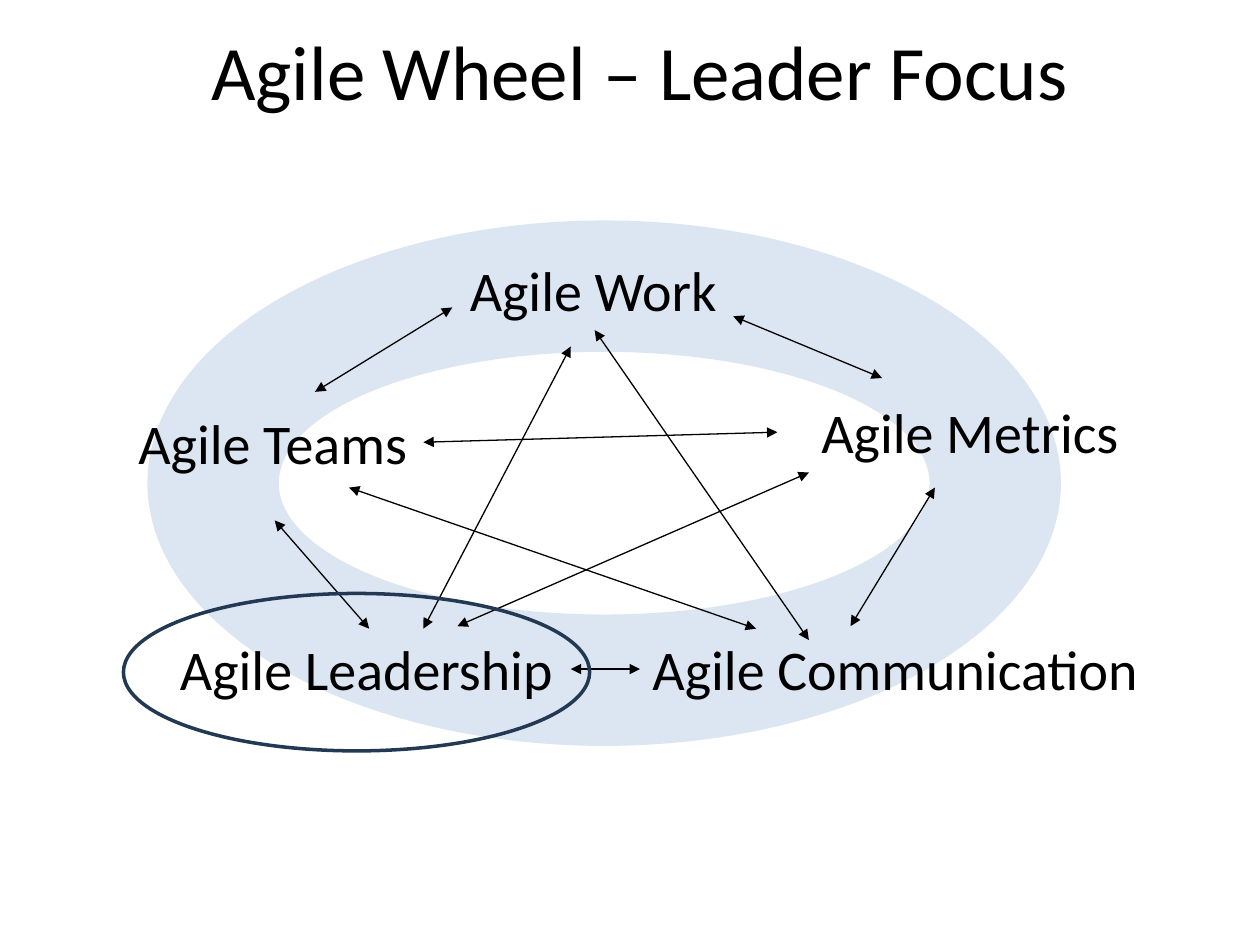
import pptx
import pptx.util
import pptx.dml.color
import pptx.enum.shapes
import pptx.enum.text
import pptx.oxml
from pptx.oxml.ns import qn

Inches, Pt = pptx.util.Inches, pptx.util.Pt
SHAPE = pptx.enum.shapes.MSO_SHAPE
ANCHOR = pptx.enum.text.MSO_ANCHOR
ALIGN = pptx.enum.text.PP_ALIGN
AUTO_SIZE = pptx.enum.text.MSO_AUTO_SIZE

FONT = "Calibri"
BLACK, PALE_BLUE, NAVY = "000000", "DCE6F2", "233953"

TITLE = ("Agile Wheel – Leader Focus", (0.58, 0.14, 9, 1.25))
WHEEL = (1.17, 1.75, 7.25, 4.17)
FOCUS_RING = (0.98, 4.71, 3.7, 1.25)

LABEL_HEIGHT = 0.64
LABELS = [  # text, left, top, width
    ("Agile Work", 3.63, 1.98, 2.18),
    ("Agile Metrics", 6.42, 3.11, 2.58),
    ("Agile Communication", 5.08, 4.99, 4.1),
    ("Agile Teams", 1, 3.19, 2.36),
    ("Agile Leadership", 1.33, 4.99, 3.19),
]

ARROWS = [  # start, end
    ((4.53, 2.75), (3.36, 4.99)),  # work - leadership
    ((4.72, 2.62), (6.42, 5.08)),  # work - communication
    ((5.82, 2.51), (7, 3)),        # work - metrics
    ((3.59, 2.44), (2.5, 3.11)),   # work - teams
    ((3.63, 4.97), (6.42, 3.75)),  # leadership - metrics
    ((2.77, 3.87), (6, 4.99)),     # teams - communication
    ((4.53, 5.31), (5.08, 5.31)),  # leadership - communication
    ((3.36, 3.51), (6.17, 3.43)),  # teams - metrics
    ((7.42, 3.87), (6.75, 4.97)),  # metrics - communication
    ((2.18, 4.13), (2.93, 4.99)),  # teams - leadership
]


def color(hex_string):
    return pptx.dml.color.RGBColor.from_string(hex_string)


def add_text(slide, text, box, size, align=ALIGN.LEFT, wrap=True):
    frame = slide.shapes.add_textbox(*map(Inches, box)).text_frame
    frame.word_wrap = wrap
    frame.auto_size = AUTO_SIZE.NONE if wrap else AUTO_SIZE.SHAPE_TO_FIT_TEXT
    frame.vertical_anchor = ANCHOR.TOP
    paragraph = frame.paragraphs[0]
    paragraph.alignment = align
    run = paragraph.add_run()
    run.text = text
    run.font.name = FONT
    run.font.size = Pt(size)
    run.font.color.rgb = color(BLACK)


def add_shape(slide, kind, box, fill=None, line=None):
    shape = slide.shapes.add_shape(kind, *map(Inches, box))
    shape.shadow.inherit = False
    if fill:
        shape.fill.solid()
        shape.fill.fore_color.rgb = color(fill)
    else:
        shape.fill.background()
    if line:
        shape.line.color.rgb = color(line)
        shape.line.width = Pt(2)
    else:
        shape.line.fill.background()


def add_double_arrow(slide, start, end):
    connector = slide.shapes.add_connector(
        pptx.enum.shapes.MSO_CONNECTOR.STRAIGHT, *map(Inches, start + end))
    connector.line.color.rgb = color(BLACK)
    connector.line.width = Pt(0.75)
    line = connector.line._get_or_add_ln()
    for tag in ("a:headEnd", "a:tailEnd"):
        arrowhead = pptx.oxml.xmlchemy.OxmlElement(tag)
        arrowhead.set("type", "triangle")
        line.append(arrowhead)
    properties = connector._element.find(qn("p:spPr"))
    properties.append(pptx.oxml.xmlchemy.OxmlElement("a:effectLst"))


def main():
    presentation = pptx.Presentation()
    presentation.slide_width = Inches(10)
    presentation.slide_height = Inches(7.5)
    slide = presentation.slides.add_slide(presentation.slide_layouts[6])

    title, title_box = TITLE
    add_text(slide, title, title_box, 44, ALIGN.CENTER)
    add_shape(slide, SHAPE.DONUT, WHEEL, fill=PALE_BLUE)
    for text, left, top, width in LABELS:
        add_text(slide, text, (left, top, width, LABEL_HEIGHT), 32, wrap=False)
    for start, end in ARROWS:
        add_double_arrow(slide, start, end)
    add_shape(slide, SHAPE.OVAL, FOCUS_RING, line=NAVY)

    presentation.save("out.pptx")


if __name__ == "__main__":
    main()
